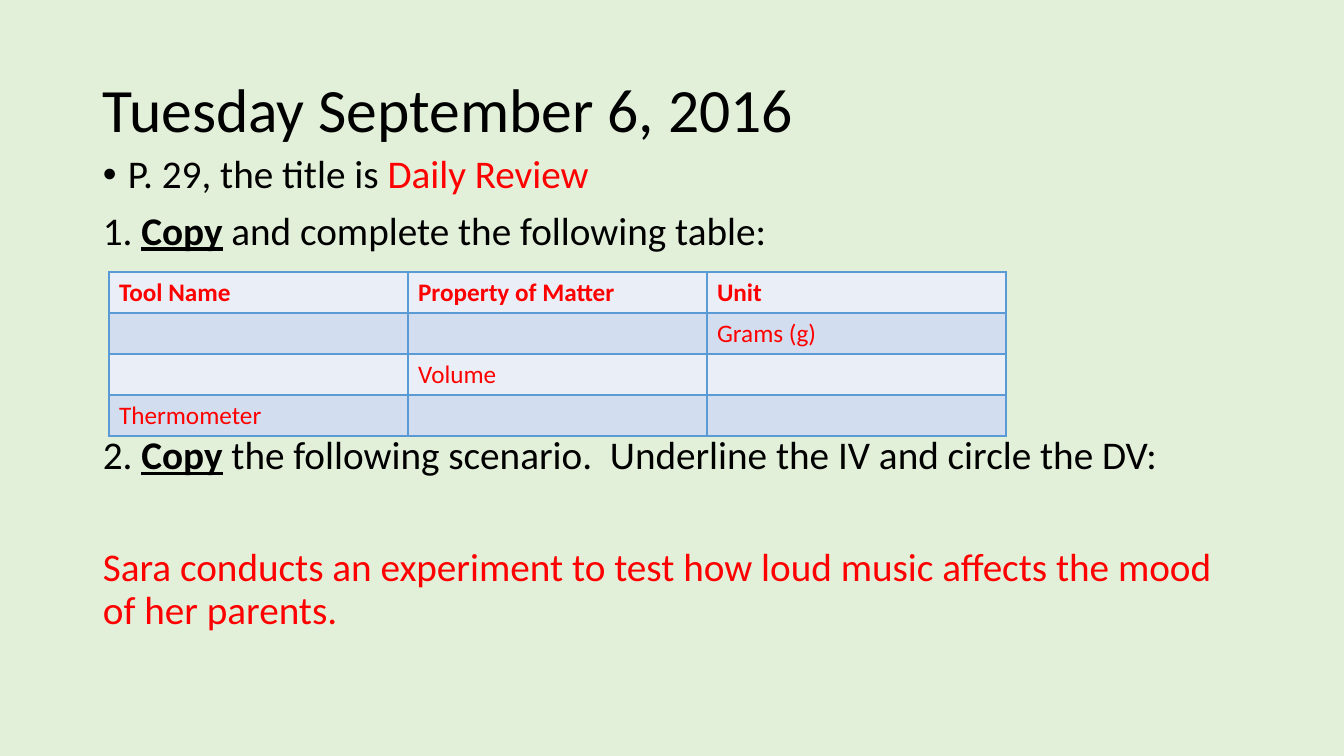
from dataclasses import dataclass

from lxml import etree
from pptx import Presentation
from pptx.dml.color import RGBColor
from pptx.enum.text import MSO_ANCHOR
from pptx.oxml.ns import qn
from pptx.util import Pt

PX = 12192000 / 1344
TOP, MIDDLE = MSO_ANCHOR.TOP, MSO_ANCHOR.MIDDLE


@dataclass(frozen=True)
class Theme:
    font: str = "Calibri"
    back: str = "E2F0D9"
    ink: str = "000000"
    red: str = "FF0000"
    bands: tuple = ("EAEFF7", "D2DEEF")
    rule: str = "5B9BD5"
    title: int = 44
    body: int = 28
    cell: int = 18


def px(n):
    return round(n * PX)


def rgb(code):
    return RGBColor.from_string(code)


class Page:
    def __init__(self, deck, theme):
        self.theme = theme
        self.slide = deck.slides.add_slide(deck.slide_layouts[6])
        fill = self.slide.background.fill
        fill.solid()
        fill.fore_color.rgb = rgb(theme.back)

    def run(self, para, text, size, color, bold=False, line=False):
        run = para.add_run()
        run.text = text
        font = run.font
        font.name, font.size = self.theme.font, Pt(size)
        font.bold, font.underline = bold, line
        font.color.rgb = rgb(color)

    def bullet(self, para):
        props = para._p.get_or_add_pPr()
        props.set("marL", str(px(25)))
        props.set("indent", str(px(-25)))
        etree.SubElement(props, qn("a:buFont"), typeface="Arial")
        etree.SubElement(props, qn("a:buChar"), char="•")

    def text(self, left, top, width, height, paras, size, anchor=TOP):
        """Each paragraph is (space before in points, bulleted, runs)."""
        box = self.slide.shapes.add_textbox(px(left), px(top), px(width), px(height))
        frame = box.text_frame
        frame.word_wrap = True
        frame.vertical_anchor = anchor
        for i, (gap, dot, runs) in enumerate(paras):
            para = frame.add_paragraph() if i else frame.paragraphs[0]
            para.line_spacing = 0.9
            para.space_before = Pt(gap)
            if dot:
                self.bullet(para)
            for words, color, *marks in runs:
                self.run(para, words, size, color, *marks)

    def border(self, cell):
        props = cell._tc.get_or_add_tcPr()
        for i, side in enumerate("LRTB"):
            line = etree.Element(qn(f"a:ln{side}"), w=str(Pt(1)))
            fill = etree.SubElement(line, qn("a:solidFill"))
            etree.SubElement(fill, qn("a:srgbClr"), val=self.theme.rule)
            props.insert(i, line)

    def table(self, left, top, wide, high, rows):
        """Draw rows of equal cells, wide by high px, with a bold first row."""
        theme = self.theme
        count = len(rows[0])
        grid = self.slide.shapes.add_table(
            len(rows), count, px(left), px(top), px(wide * count), px(high * len(rows))
        ).table
        for r, row in enumerate(rows):
            for c, words in enumerate(row):
                cell = grid.cell(r, c)
                cell.fill.solid()
                cell.fill.fore_color.rgb = rgb(theme.bands[r % 2])
                self.border(cell)
                if words:
                    para = cell.text_frame.paragraphs[0]
                    self.run(para, words, theme.cell, theme.red, r == 0)


def main():
    deck = Presentation()
    deck.slide_width, deck.slide_height = px(1344), px(756)
    theme = Theme()
    ink, red = theme.ink, theme.red
    page = Page(deck, theme)

    page.text(93, 40, 1159, 146,
              [(0, False, [("Tuesday September 6, 2016", ink)])],
              theme.title, MIDDLE)

    copy = ("Copy", ink, True, True)
    page.text(93, 150, 1159, 531, [
        (10, True, [("P. 29, the title is ", ink), ("Daily Review", red)]),
        (10, False, [("1. ", ink), copy,
                     (" and complete the following table:", ink)]),
        (130, False, [("2. ", ink), copy,
                      (" the following scenario.  Underline the IV and circle the DV:", ink)]),
        (50, False, [("Sara conducts an experiment to test how loud music "
                      "affects the mood of her parents.", red)]),
    ], theme.body)

    page.table(109, 272, 299, 41, [
        ("Tool Name", "Property of Matter", "Unit"),
        ("", "", "Grams (g)"),
        ("", "Volume", ""),
        ("Thermometer", "", ""),
    ])
    deck.save("out.pptx")


if __name__ == "__main__":
    main()
